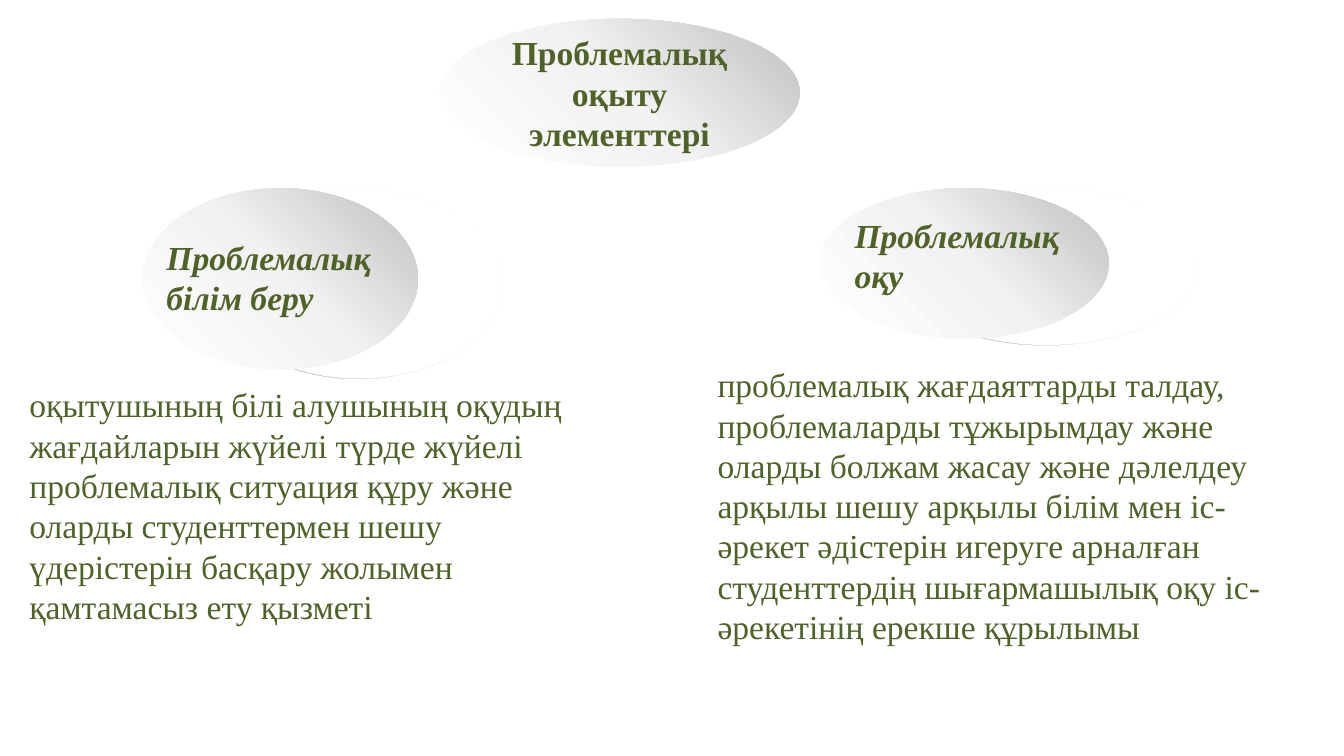
import copy

import pptx
import pptx.dml.color
import pptx.enum.shapes
import pptx.enum.text
import pptx.oxml.ns
import pptx.util
from pptx.util import Inches

RGBColor = pptx.dml.color.RGBColor
MSO_SHAPE = pptx.enum.shapes.MSO_SHAPE

GREEN = RGBColor(0x4F, 0x62, 0x28)
WHITE = RGBColor(0xFF, 0xFF, 0xFF)
PALE = RGBColor(0xF2, 0xF2, 0xF2)
SILVER = RGBColor(0xBF, 0xBF, 0xBF)
GREY = RGBColor(0xA6, 0xA6, 0xA6)

# Gradient stops and angle, counter-clockwise from the horizontal
OVAL_SHADING = [(0, WHITE), (0.51, PALE), (1, SILVER)], 45
RING_SHADING = [(0, WHITE), (0.55, PALE), (1, GREY)], 225

# Boxes are left, top, width, height in inches
HEADING = "Проблемалық оқыту элементтері"
HEADING_BOX = (3.27, 0.14, 2.68, 1.1)
ELEMENTS = [
    {
        "name": "Проблемалық оқу",
        "name_box": (6.26, 1.55, 2.05, 0.71),
        "ring": (6.66, 1.4, 2.25, 1.17),
        "oval": (6.1, 1.4, 2.15, 1.12),
        "meaning": "проблемалық жағдаяттарды талдау, проблемаларды тұжырымдау "
                   "және оларды болжам жасау және дәлелдеу арқылы шешу арқылы "
                   "білім мен іс-әрекет әдістерін игеруге арналған "
                   "студенттердің шығармашылық оқу іс-әрекетінің ерекше құрылымы",
        "meaning_box": (5.24, 2.66, 4.65, 2.22),
    },
    {
        "name": "Проблемалық білім беру",
        "name_box": (1.14, 1.71, 2.05, 0.71),
        "ring": (1.59, 1.41, 2.15, 1.41),
        "oval": (1.06, 1.4, 2.05, 1.35),
        "meaning": "оқытушының білі алушының оқудың жағдайларын жүйелі түрде "
                   "жүйелі проблемалық ситуация құру және оларды студенттермен "
                   "шешу үдерістерін басқару жолымен қамтамасыз ету қызметі",
        "meaning_box": (0.12, 2.81, 4.17, 1.92),
    },
]


def add_shaded(shapes, kind, box, shading):
    """Add a borderless preset shape with a three-stop gradient."""
    stops, angle = shading
    shaded = shapes.add_shape(kind, *map(Inches, box))
    shaded.shadow.inherit = False
    shaded.line.fill.background()
    shaded.fill.gradient()
    shaded.fill.gradient_angle = angle
    stop_list = shaded._element.spPr.find(".//" + pptx.oxml.ns.qn("a:gsLst"))
    stop_list.append(copy.deepcopy(stop_list[-1]))
    for stop, (position, color) in zip(shaded.fill.gradient_stops, stops):
        stop.position = position
        stop.color.rgb = color
    return shaded


def write(frame, text, bold=False, italic=False):
    frame.word_wrap = True
    frame.text = text
    font = frame.paragraphs[0].runs[0].font
    font.name = "Times New Roman"
    font.size = pptx.util.Pt(18)
    font.color.rgb = GREEN
    font.bold = bold
    font.italic = italic


def add_text(slide, box, text, **style):
    frame = slide.shapes.add_textbox(*map(Inches, box)).text_frame
    write(frame, text, **style)
    frame.auto_size = pptx.enum.text.MSO_AUTO_SIZE.SHAPE_TO_FIT_TEXT


def main():
    deck = pptx.Presentation()
    deck.slide_width = Inches(10)
    deck.slide_height = deck.slide_width * 9 // 16
    slide = deck.slides.add_slide(deck.slide_layouts.get_by_name("Blank"))

    heading = add_shaded(slide.shapes, MSO_SHAPE.OVAL, HEADING_BOX, OVAL_SHADING)
    write(heading.text_frame, HEADING, bold=True)
    heading.text_frame.vertical_anchor = pptx.enum.text.MSO_ANCHOR.MIDDLE
    heading.text_frame.paragraphs[0].alignment = pptx.enum.text.PP_ALIGN.CENTER

    for element in ELEMENTS:
        badge = slide.shapes.add_group_shape().shapes
        ring = add_shaded(badge, MSO_SHAPE.DONUT, element["ring"], RING_SHADING)
        ring.adjustments[0] = 0
        add_shaded(badge, MSO_SHAPE.OVAL, element["oval"], OVAL_SHADING)
        add_text(slide, element["name_box"], element["name"], bold=True, italic=True)
        add_text(slide, element["meaning_box"], element["meaning"])

    deck.save("out.pptx")


if __name__ == "__main__":
    main()
